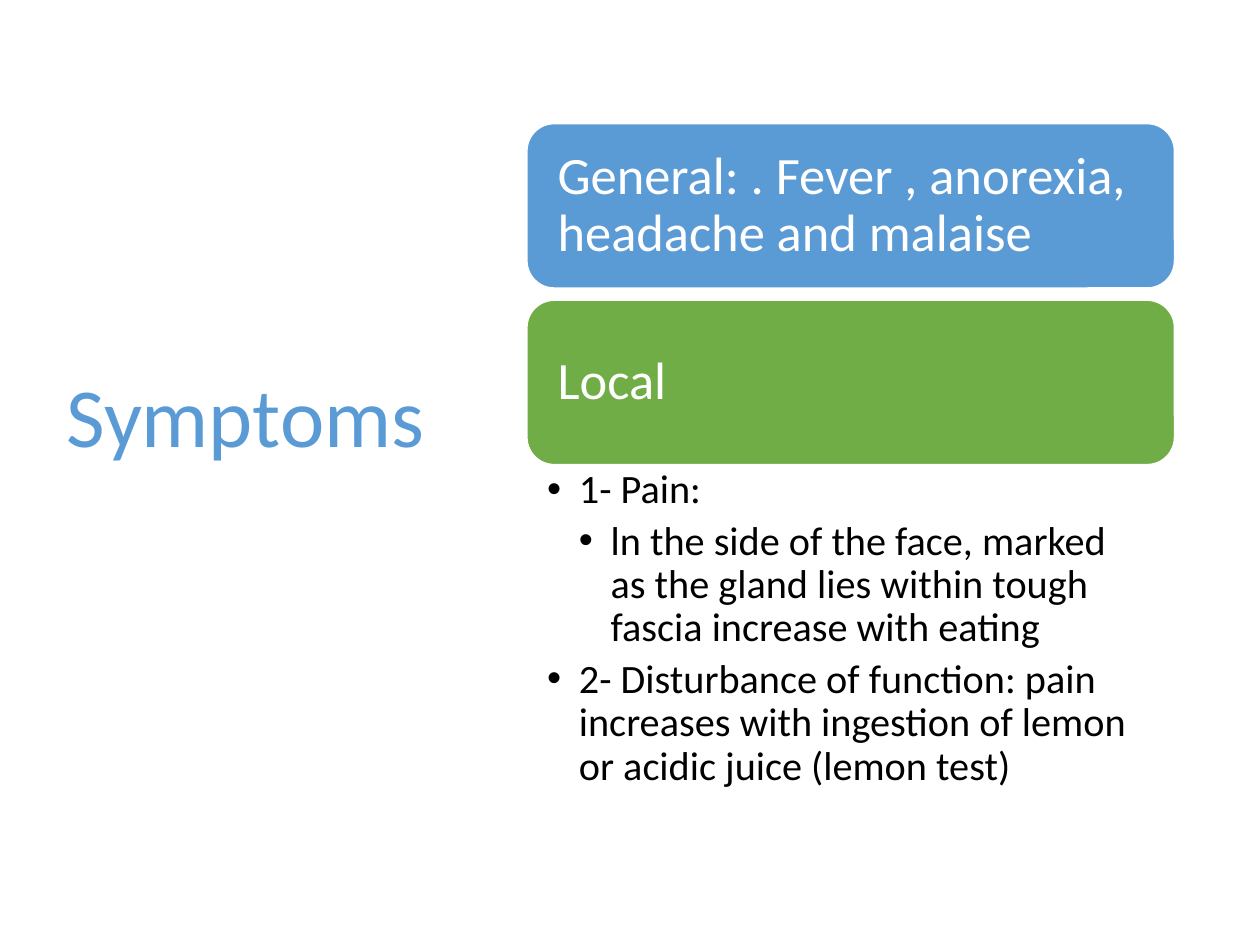
from lxml.etree import SubElement
from pptx import Presentation
from pptx.dml.color import RGBColor
from pptx.enum.shapes import MSO_SHAPE
from pptx.enum.text import MSO_ANCHOR, MSO_AUTO_SIZE, PP_ALIGN
from pptx.oxml.ns import qn
from pptx.util import Cm, Pt

FONT = "Calibri"
COLOURS = {"blue": "5B9BD5", "green": "70AD47", "white": "FFFFFF", "black": "000000"}

# Right-hand column shared by the cards and the list
COLUMN_LEFT, COLUMN_WIDTH = 10.62, 13.06
CARD_TOP, CARD_HEIGHT, CARD_PITCH = 2.49, 3.32, 3.56
INDENT = Cm(0.64)

CARDS = [
    ("General: . Fever , anorexia, headache and malaise", "blue"),
    ("Local", "green"),
]
SYMPTOMS = [
    (0, "1- Pain:"),
    (1, "ln the side of the face, marked as the gland lies within tough "
        "fascia increase with eating"),
    (0, "2- Disturbance of function: pain increases with ingestion of lemon "
        "or acidic juice (lemon test)"),
]


def colour(name):
    return RGBColor.from_string(COLOURS[name])


def place(shape, left, top, width, height):
    shape.left, shape.top = Cm(left), Cm(top)
    shape.width, shape.height = Cm(width), Cm(height)


def set_frame(text_frame, anchor, left, top, right, bottom):
    text_frame.word_wrap = True
    text_frame.auto_size = MSO_AUTO_SIZE.NONE
    text_frame.vertical_anchor = anchor
    text_frame.margin_left, text_frame.margin_top = Cm(left), Cm(top)
    text_frame.margin_right, text_frame.margin_bottom = Cm(right), Cm(bottom)


def format_paragraph(paragraph, size, colour_name, space_after=0):
    paragraph.alignment = PP_ALIGN.LEFT
    paragraph.line_spacing = 0.9
    paragraph.space_before = Pt(0)
    paragraph.space_after = Pt(space_after)
    for run in paragraph.runs:
        run.font.name = FONT
        run.font.size = Pt(size)
        run.font.color.rgb = colour(colour_name)


def add_bullet(paragraph):
    properties = paragraph._p.get_or_add_pPr()
    properties.set("marL", str(INDENT * (paragraph.level + 1)))
    properties.set("indent", str(-INDENT))
    SubElement(properties, qn("a:buFont")).set("typeface", "Arial")
    SubElement(properties, qn("a:buChar")).set("char", "•")


def fill_title(title, text):
    place(title, 1.09, 1.73, 7.92, 15.29)
    title.text_frame.text = text
    # The deep bottom margin lifts the title above the middle
    set_frame(title.text_frame, MSO_ANCHOR.MIDDLE, 0.25, 0.13, 0.25, 1.95)
    format_paragraph(title.text_frame.paragraphs[0], 48, "blue")


def add_card(slide, top, text, fill_name):
    card = slide.shapes.add_shape(
        MSO_SHAPE.ROUNDED_RECTANGLE,
        Cm(COLUMN_LEFT), Cm(top), Cm(COLUMN_WIDTH), Cm(CARD_HEIGHT))
    card.shadow.inherit = False
    card.fill.solid()
    card.fill.fore_color.rgb = colour(fill_name)
    card.line.color.rgb = colour("white")
    card.line.width = Pt(1)
    card.text_frame.text = text
    set_frame(card.text_frame, MSO_ANCHOR.MIDDLE, 0.46, 0.46, 0.46, 0.46)
    format_paragraph(card.text_frame.paragraphs[0], 30, "white")


def fill_list(body, items):
    place(body, COLUMN_LEFT, 9.35, COLUMN_WIDTH, 6.91)
    text_frame = body.text_frame
    text_frame.text = "\n".join(text for _, text in items)
    set_frame(text_frame, MSO_ANCHOR.TOP, 0.41, 0.1, 0.58, 0.1)
    for paragraph, (level, _) in zip(text_frame.paragraphs, items):
        paragraph.level = level
        format_paragraph(paragraph, 23, "black", space_after=4.6)
        add_bullet(paragraph)


def main():
    presentation = Presentation()
    presentation.slide_width, presentation.slide_height = Cm(25.4), Cm(19.05)
    slide = presentation.slides.add_slide(presentation.slide_layouts[1])

    # Title on the left
    fill_title(slide.shapes.title, "Symptoms")

    # Cards stacked on the right
    for index, (text, fill_name) in enumerate(CARDS):
        add_card(slide, CARD_TOP + index * CARD_PITCH, text, fill_name)

    # Local symptoms under the cards
    fill_list(slide.placeholders[1], SYMPTOMS)

    presentation.save("out.pptx")


if __name__ == "__main__":
    main()
